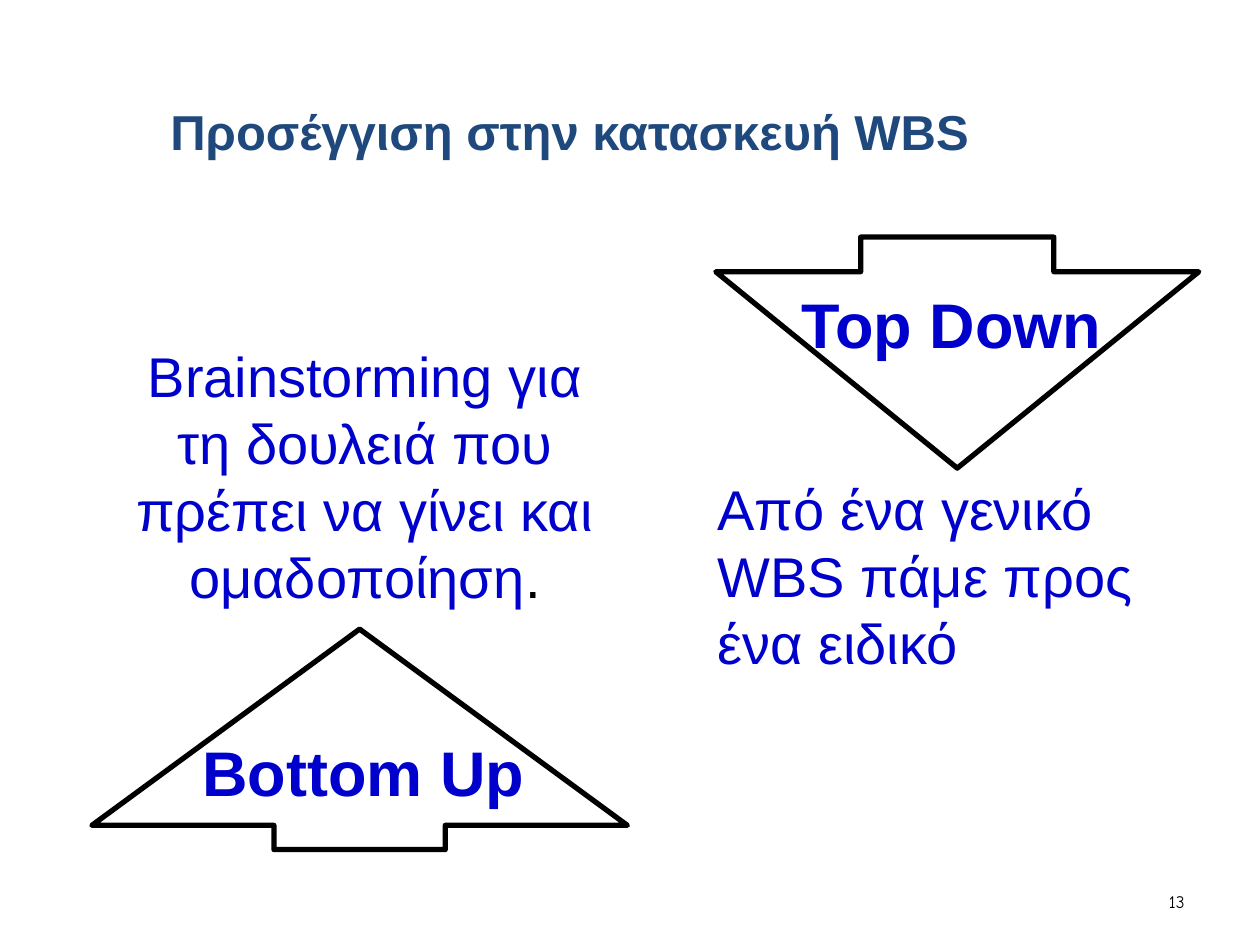
from dataclasses import dataclass

from pptx import Presentation
from pptx.dml.color import RGBColor
from pptx.enum.shapes import MSO_SHAPE as Shape
from pptx.enum.text import MSO_ANCHOR as Anchor, PP_ALIGN as Align
from pptx.util import Pt


@dataclass(frozen=True)
class Theme:
    navy: RGBColor = RGBColor(0x1F, 0x49, 0x7D)
    blue: RGBColor = RGBColor(0x00, 0x00, 0xCC)
    black: RGBColor = RGBColor(0, 0, 0)
    white: RGBColor = RGBColor(255, 255, 255)
    font: str = "Arial"
    number_font: str = "Comic Neue"
    title: int = 28
    body: int = 32
    label: int = 36
    number: int = 10
    outline: int = 3


THEME = Theme()


def add_text(slide, box, runs, size, align=Align.LEFT, anchor=Anchor.TOP,
             bold=False, wrap=True, font=THEME.font):
    """Place one paragraph; runs are (text, colour) pairs."""
    frame = slide.shapes.add_textbox(*map(Pt, box)).text_frame
    frame.word_wrap = wrap
    frame.vertical_anchor = anchor
    paragraph = frame.paragraphs[0]
    paragraph.alignment = align
    for text, colour in runs:
        run = paragraph.add_run()
        run.text = text
        run.font.name = font
        run.font.size = Pt(size)
        run.font.bold = bold
        run.font.color.rgb = colour


def add_arrow(slide, box, kind, shaft, head, fill=None):
    """Outline arrow; shaft and head are fractions of its width and height."""
    arrow = slide.shapes.add_shape(kind, *map(Pt, box))
    arrow.shadow.inherit = False
    arrow.adjustments[0] = shaft
    arrow.adjustments[1] = head
    if fill is None:
        arrow.fill.background()
    else:
        arrow.fill.solid()
        arrow.fill.fore_color.rgb = fill
    arrow.line.color.rgb = THEME.black
    arrow.line.width = Pt(THEME.outline)


def add_label(slide, box, text):
    add_text(slide, box, [(text, THEME.blue)], THEME.label, bold=True, wrap=False)


def add_title(slide, box):
    add_text(slide, box, [("Προσέγγιση στην κατασκευή WBS", THEME.navy)],
             THEME.title, Align.CENTER, Anchor.BOTTOM, bold=True)


def add_bottom_up(slide, box):
    left, top, width, height = box
    explanation = [
        ("Brainstorming για τη δουλειά που πρέπει να γίνει και ομαδοποίηση", THEME.blue),
        (".", THEME.black),
    ]
    add_text(slide, (left + 18, top, 276, 163), explanation, THEME.body, Align.CENTER)
    arrow_top = top + 168
    add_arrow(slide, (left, arrow_top, width, height - 168), Shape.UP_ARROW, 0.32, 0.89)
    add_label(slide, (left + 56, arrow_top + 56, 199, 50), "Bottom Up")


def add_top_down(slide, box):
    left, top, width, height = box
    arrow_height = 132
    add_arrow(slide, (left + 6, top, width - 12, arrow_height),
              Shape.DOWN_ARROW, 0.4, 0.85, THEME.white)
    add_text(slide, (left, top + arrow_height, width, height - arrow_height),
             [("Από ένα γενικό WBS πάμε προς ένα ειδικό", THEME.blue)], THEME.body)
    add_label(slide, (left + 48, top + 24, 189, 50), "Top Down")


def add_page_number(slide, box):
    add_text(slide, box, [("13", THEME.black)], THEME.number, Align.RIGHT,
             Anchor.MIDDLE, font=THEME.number_font)


def main():
    deck = Presentation()
    deck.slide_width, deck.slide_height = Pt(720), Pt(540)
    slide = deck.slides.add_slide(deck.slide_layouts[6])
    add_page_number(slide, (516, 500.5, 168, 29))
    add_title(slide, (19.5, 9.5, 612, 85.5))
    add_bottom_up(slide, (52.5, 191.5, 306, 294))
    add_top_down(slide, (403, 135.5, 288, 255.5))
    deck.save("out.pptx")


if __name__ == "__main__":
    main()
